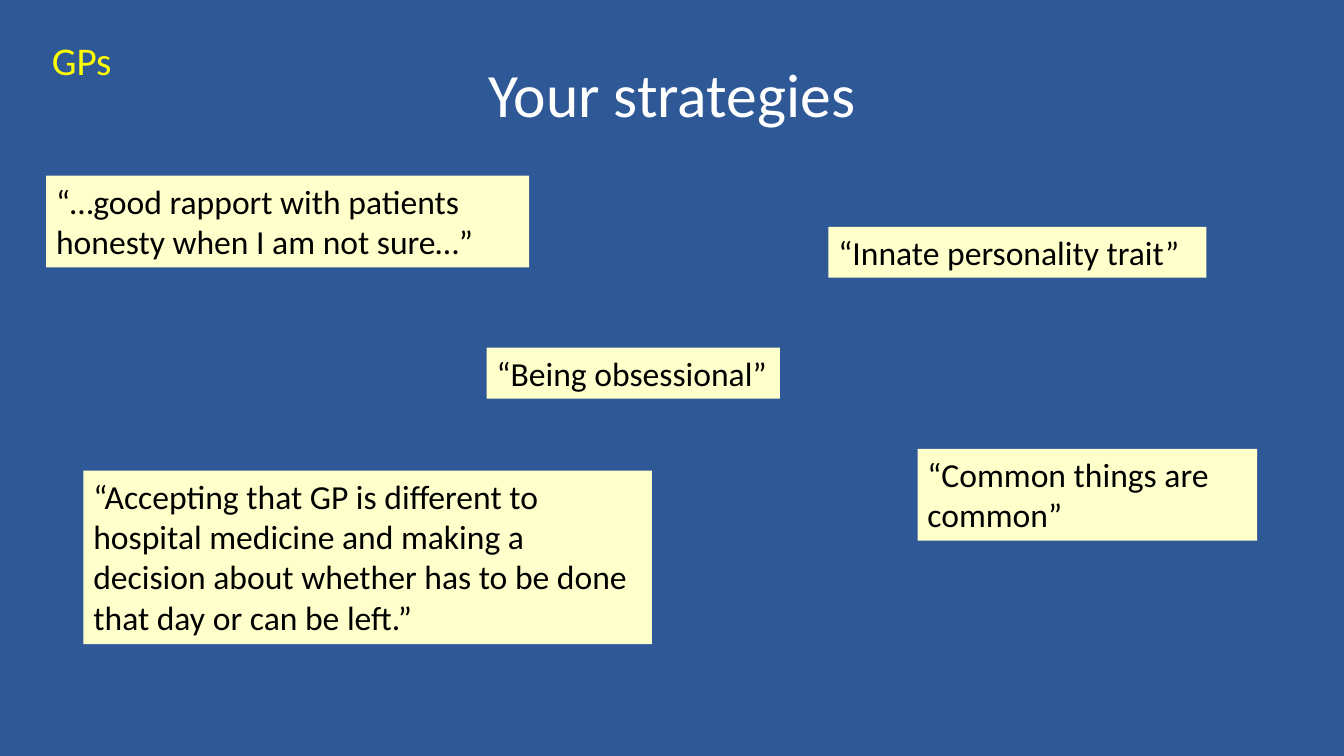
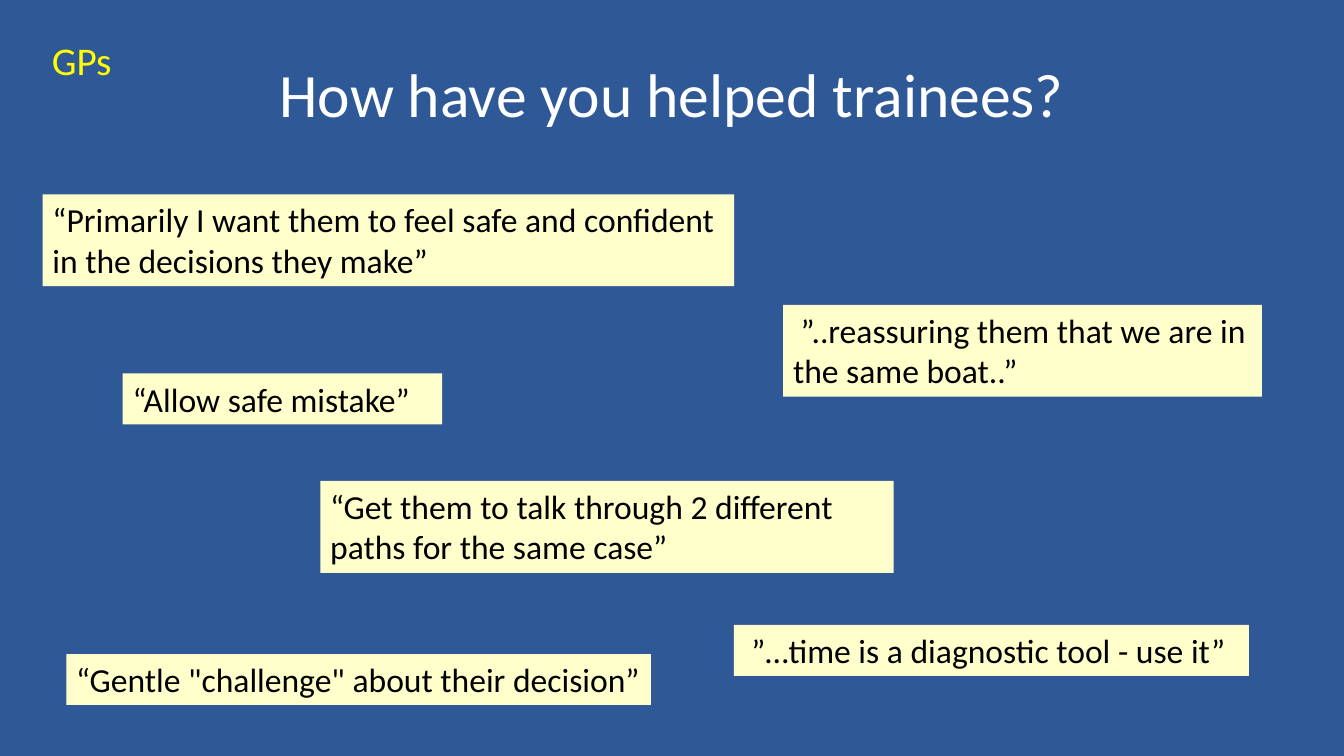
from dataclasses import dataclass

from pptx import Presentation
from pptx.dml.color import RGBColor
from pptx.enum import shapes, text
from pptx.util import Pt

COLOURS = {
    "background": "2F5897",
    "title": "FFFFFF",
    "tag": "FFFF00",
    "note": "FFFFCC",
    "ink": "000000",
}
FONT = "Calibri"
PAGE_WIDTH, PAGE_HEIGHT = 960, 540
LINE_HEIGHT = 29.2
NOTE_PADDING = 7.2


@dataclass
class Box:
    left: float
    top: float
    width: float
    height: float

    def lengths(self):
        return [Pt(value) for value in (self.left, self.top, self.width, self.height)]


TITLE_BOX = Box(48, 21.6, 864, 90)
TAG_BOX = Box(30, 22.4, 68, 41)
QUOTES_BOX = Box(30, 125, 900, 385)

# Each quote: left and top within QUOTES_BOX, width, number of lines, wording
SLIDES = [
    ("Your strategies", [
        (625.4, 195.6, 242.6, 2, "“Common things are common”"),
        (3, 0.4, 345, 2, "“…good rapport with patients honesty when I am not sure…”"),
        (29.6, 211.2, 406, 4,
         "“Accepting that GP is different to hospital medicine and making a "
         "decision about whether has to be done that day or can be left.”"),
        (317.6, 123.4, 209.4, 1, "“Being obsessional”"),
        (561.8, 37, 270, 1, "“Innate personality trait”"),
    ]),
    ("How have you helped trainees?", [
        (0.4, 13.8, 494, 2,
         "“Primarily I want them to feel safe and confident in the decisions they make”"),
        (17.4, 342.2, 417.6, 1, "“Gentle \"challenge\" about their decision”"),
        (494.2, 321.4, 368, 1, " ”…time is a diagnostic tool - use it”"),
        (529.4, 92.8, 342, 2, " ”..reassuring them that we are in the same boat..”"),
        (57.6, 141.8, 228.2, 1, "“Allow safe mistake”"),
        (198.8, 218.6, 409.6, 2,
         "“Get them to talk through 2 different paths for the same case”"),
    ]),
]


def colour(name):
    return RGBColor.from_string(COLOURS[name])


def write(shape, words, size, ink, align=text.PP_ALIGN.LEFT,
          anchor=text.MSO_ANCHOR.TOP, fit=text.MSO_AUTO_SIZE.SHAPE_TO_FIT_TEXT):
    frame = shape.text_frame
    frame.text = words
    frame.word_wrap = True
    frame.auto_size = fit
    frame.vertical_anchor = anchor
    para = frame.paragraphs[0]
    para.alignment = align
    font = para.runs[0].font
    font.name = FONT
    font.size = Pt(size)
    font.color.rgb = colour(ink)


def add_title(page, box, words):
    title = page.shapes.title
    title.left, title.top, title.width, title.height = box.lengths()
    write(title, words, 44, "title", text.PP_ALIGN.CENTER,
          text.MSO_ANCHOR.MIDDLE, text.MSO_AUTO_SIZE.NONE)


def add_tag(page, box):
    """Name the group of people quoted on the page."""
    write(page.shapes.add_textbox(*box.lengths()), "GPs", 28, "tag")


def add_quotes(page, box, quotes):
    for left, top, width, lines, words in quotes:
        place = Box(box.left + left, box.top + top, width,
                    NOTE_PADDING + lines * LINE_HEIGHT)
        note = page.shapes.add_shape(shapes.MSO_SHAPE.RECTANGLE, *place.lengths())
        note.shadow.inherit = False
        note.fill.solid()
        note.fill.fore_color.rgb = colour("note")
        note.line.fill.background()
        write(note, words, 24, "ink")


def add_quote_slide(deck, heading, quotes):
    page = deck.slides.add_slide(deck.slide_layouts.get_by_name("Title Only"))
    add_title(page, TITLE_BOX, heading)
    add_quotes(page, QUOTES_BOX, quotes)
    add_tag(page, TAG_BOX)


def main():
    deck = Presentation()
    deck.slide_width, deck.slide_height = Pt(PAGE_WIDTH), Pt(PAGE_HEIGHT)
    backdrop = deck.slide_master.background.fill
    backdrop.solid()
    backdrop.fore_color.rgb = colour("background")
    for heading, quotes in SLIDES:
        add_quote_slide(deck, heading, quotes)
    deck.save("out.pptx")


if __name__ == "__main__":
    main()
